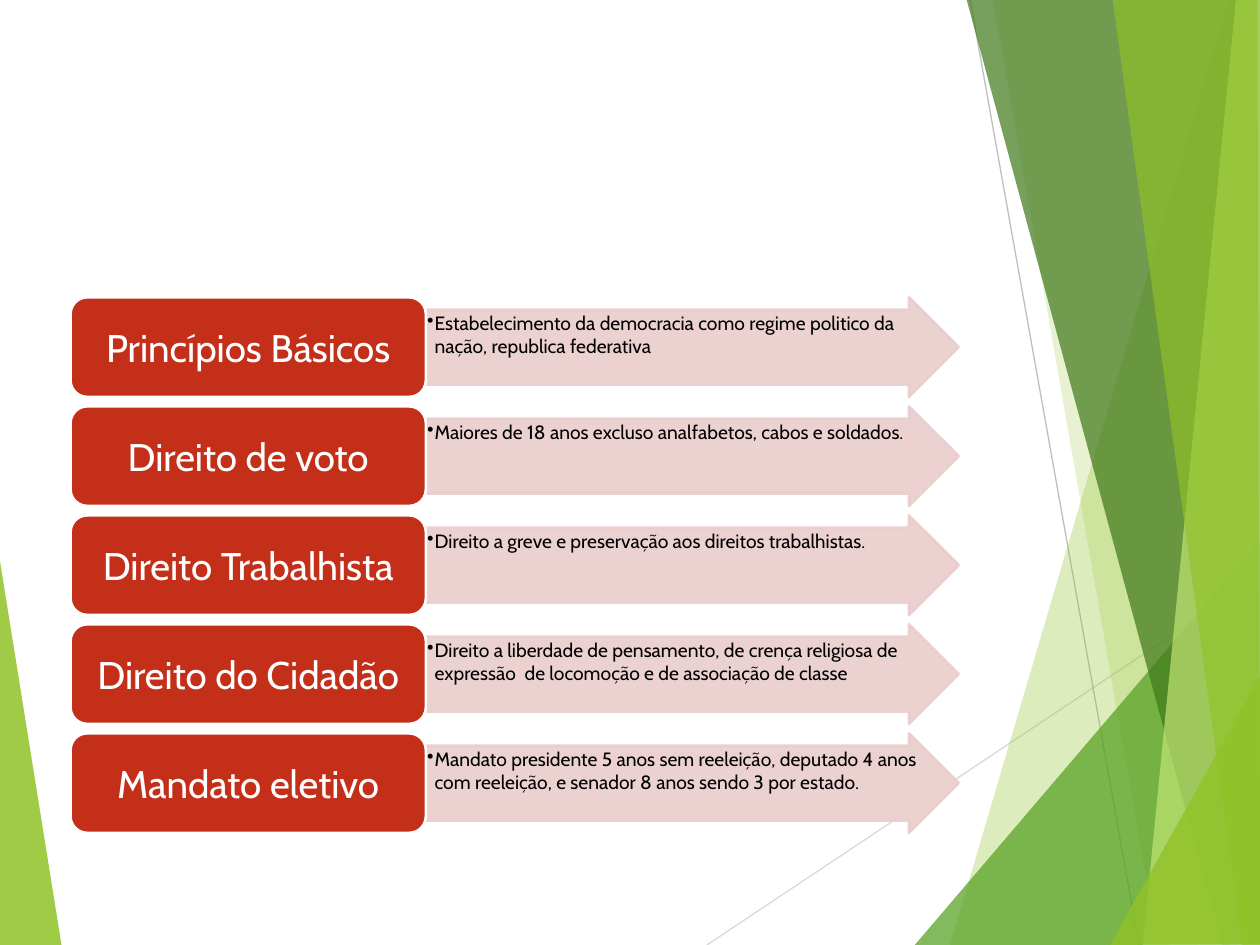
from lxml import etree
from pptx import Presentation, util as u
from pptx.dml.color import RGBColor
from pptx.enum import shapes, text
from pptx.oxml.ns import qn

HUES = {
    "lime": "90C226", "green": "54A021", "forest": "3F7819", "pale": "C0E474",
    "light": "D9D9D9", "grey": "BFBFBF", "pink": "EACDCD", "red": "C42F1A",
    "white": "FFFFFF", "black": "000000",
}
KIND = shapes.MSO_SHAPE
PAD = {"margin_left": 0.09, "margin_top": 0.05, "margin_right": 0.09, "margin_bottom": 0.05}
TIGHT = dict.fromkeys(PAD, 0.01)


class Deck:
    font = "Cabin"

    def __init__(self, wide, high):
        self.prs = Presentation()
        self.prs.slide_width, self.prs.slide_height = u.Inches(wide), u.Inches(high)
        self.page = self.prs.slides.add_slide(self.prs.slide_layouts[6])

    def tint(self, fmt, hue, alpha=100):
        """Give a fill a solid colour with the given opacity."""
        fmt.solid()
        fmt.fore_color.rgb = RGBColor.from_string(HUES[hue])
        if alpha < 100:
            node = fmt._xPr.find(qn("a:solidFill"))[0]
            etree.SubElement(node, qn("a:alpha"), val=str(alpha * 1000))

    def facet(self, pts, hue, alpha):
        """Draw a closed translucent polygon."""
        pts = [(u.Inches(x), u.Inches(y)) for x, y in pts]
        pen = self.page.shapes.build_freeform(*pts[0])
        pen.add_line_segments(pts[1:], close=True)
        shape = pen.convert_to_shape()
        shape.shadow.inherit = False
        shape.line.fill.background()
        self.tint(shape.fill, hue, alpha)

    def rule(self, ends, hue):
        """Draw a thin straight line."""
        line = self.page.shapes.add_connector(
            shapes.MSO_CONNECTOR.STRAIGHT, *map(u.Inches, ends))
        line.line.width = u.Pt(0.75)
        self.tint(line.line.fill, hue)
        etree.SubElement(line._element.spPr, qn("a:effectLst"))

    def block(self, kind, box, fill, edge, words, size, ink, pad, look, alpha=100):
        """Draw a preset shape with its text, and return it."""
        shape = self.page.shapes.add_shape(kind, *map(u.Inches, box))
        shape.shadow.inherit = False
        self.tint(shape.fill, fill, alpha)
        shape.line.width = u.Pt(1.5)
        self.tint(shape.line.fill, edge, alpha)
        frame = shape.text_frame
        frame.word_wrap = True
        for name, val in pad.items():
            setattr(frame, name, u.Inches(val))
        frame.vertical_anchor = look["anchor"]
        para = frame.paragraphs[0]
        para.alignment = look["align"]
        run = para.add_run()
        run.text = words
        for name, val in {"name": self.font, "size": u.Pt(size)}.items():
            setattr(run.font, name, val)
        run.font.color.rgb = RGBColor.from_string(HUES[ink])
        return shape

    def label(self, box, words):
        """Draw a topic box."""
        look = {"anchor": text.MSO_ANCHOR.MIDDLE, "align": text.PP_ALIGN.CENTER}
        self.block(KIND.ROUNDED_RECTANGLE, box, "red", "white", words, 22, "white", PAD, look)

    def arrow(self, box, words):
        """Draw an arrow with one bullet."""
        look = {"anchor": text.MSO_ANCHOR.TOP, "align": text.PP_ALIGN.LEFT}
        shape = self.block(KIND.RIGHT_ARROW, box, "pink", "pink", words, 11, "black",
                           TIGHT, look, alpha=90)
        shape.adjustments[0], shape.adjustments[1] = 0.75, 0.5
        para = shape.text_frame.paragraphs[0]
        para.level = 1
        props = para._p.get_or_add_pPr()
        hang = u.Inches(0.06)
        for name, val in {"marL": hang, "indent": -hang}.items():
            props.set(name, str(val))
        etree.SubElement(props, qn("a:buChar"), char="•")


# Background: lines and facets, back to front
RULES = [((5.61, 7.5, 10.01, 4.57), "light"), ((7.7, 0, 9.04, 7.5), "grey")]
LEFT = ([(-0.01, 4.39), (0.49, 7.51), (-0.01, 7.5)], "lime", 85)
RIGHT = [
    ([(9.75, 0), (7.54, 7.5), (10.02, 7.51), (10.01, 0.01)], "lime", 30),
    ([(7.88, -0.01), (9.19, 7.5), (10.01, 7.5), (10.01, -0.01)], "lime", 20),
    ([(7.26, 7.5), (10, 4.29), (10.01, 7.5)], "green", 72),
    ([(7.67, -0.01), (9.7, 7.5), (10.01, 7.49), (10.01, -0.01)], "forest", 70),
    ([(9.81, -0.01), (9.07, 7.5), (10.01, 7.5), (10, -0.01)], "pale", 70),
    ([(8.83, -0.01), (9.86, 7.5), (10, 7.5), (9.98, -0.01)], "lime", 65),
    ([(8.81, 7.5), (10.01, 5.35), (10.01, 7.49)], "lime", 80),
]

# Topics and their details
ROWS = [
    ("Princípios Básicos",
     "Estabelecimento da democracia como regime politico da nação, republica federativa"),
    ("Direito de voto", "Maiores de 18 anos excluso analfabetos, cabos e soldados."),
    ("Direito Trabalhista", "Direito a greve e preservação aos direitos trabalhistas."),
    ("Direito do Cidadão",
     "Direito a liberdade de pensamento, de crença religiosa de expressão  de locomoção "
     "e de associação de classe"),
    ("Mandato eletivo",
     "Mandato presidente 5 anos sem reeleição, deputado 4 anos com reeleição, "
     "e senador 8 anos sendo 3 por estado."),
]
EDGE, TOP, WIDE, LONG, HIGH = 0.56, 2.36, 2.82, 4.23, 0.79
STEP = (5.82 - TOP) / (len(ROWS) - 1)


def main():
    deck = Deck(10, 7.5)
    deck.facet(*LEFT)
    for ends, hue in RULES:
        deck.rule(ends, hue)
    for facet in RIGHT:
        deck.facet(*facet)
    for i, (topic, detail) in enumerate(ROWS):
        y = TOP + i * STEP
        deck.arrow((EDGE + WIDE, y, LONG, HIGH), detail)
        deck.label((EDGE, y, WIDE, HIGH), topic)
    deck.prs.save("out.pptx")


if __name__ == "__main__":
    main()
